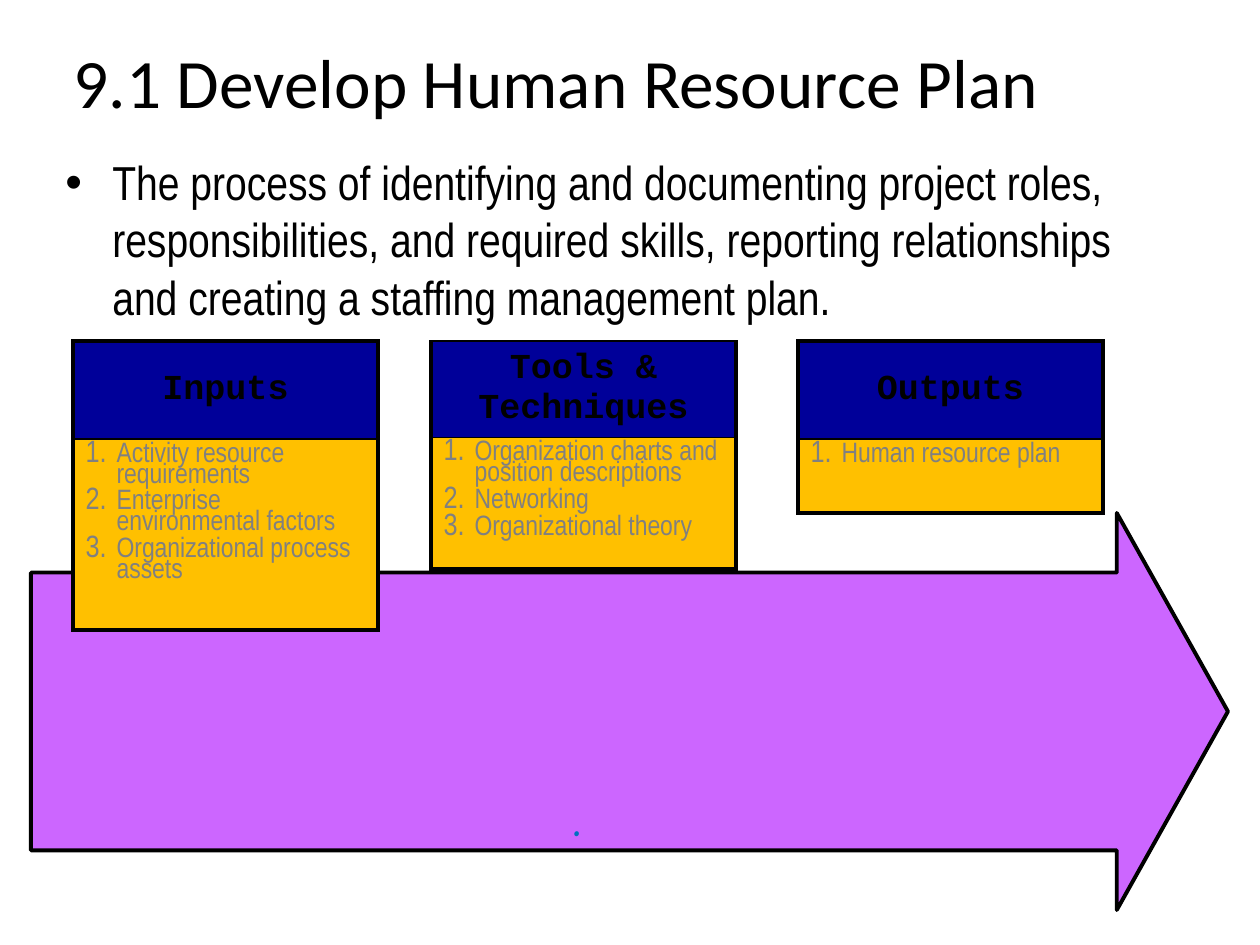
from lxml import etree
from pptx import Presentation
from pptx import util as u
from pptx.dml.color import RGBColor
from pptx.enum import shapes, text
from pptx.oxml.ns import qn

BLACK = RGBColor(0, 0, 0)
GREY = RGBColor(0x80, 0x80, 0x80)
NAVY = RGBColor(0, 0, 0x99)
GOLD = RGBColor(0xFF, 0xC0, 0)
VIOLET = RGBColor(0xCC, 0x66, 0xFF)
BLUE = RGBColor(0, 0x70, 0xC0)
THICK, THIN = 2.25, 1

# left, header height, list height, top border, heading, items
CARDS = [
    (73, 98, 191, THICK, "Inputs",
     ["Activity resource requirements", "Enterprise environmental factors",
      "Organizational process assets"]),
    (431, 90, 108, THIN, "Tools & Techniques",
     ["Organization charts and position descriptions", "Networking",
      "Organizational theory"]),
    (798, 98, 74, THICK, "Outputs", ["Human resource plan"]),
]


def px(n):
    return u.Emu(round(n * 914400 / 126))


def box(*sides):
    return [px(n) for n in sides]


def style(para, face, size, color, bold=False):
    font = para.font
    font.name, font.size, font.bold = face, u.Pt(size), bold
    font.color.rgb = color


def bullet(para, indent, tag, **attrs):
    """Give the paragraph a hanging bullet; call before its font is set."""
    props = para._p.get_or_add_pPr()
    props.set("marL", str(px(indent)))
    props.set("indent", str(-px(indent)))
    if tag == "a:buAutoNum":
        etree.SubElement(props, qn("a:buSzPct"), val="110000")
    else:
        etree.SubElement(props, qn("a:buFont"), typeface="Arial")
    etree.SubElement(props, qn(tag), **attrs)


def edge(cell, top, bottom):
    """Draw the cell's borders; the sides are always thick."""
    props = cell._tc.get_or_add_tcPr()
    widths = {"a:lnL": THICK, "a:lnR": THICK, "a:lnT": top, "a:lnB": bottom}
    for i, (tag, width) in enumerate(widths.items()):
        line = etree.Element(qn(tag), w=str(u.Pt(width)))
        fill = etree.SubElement(line, qn("a:solidFill"))
        etree.SubElement(fill, qn("a:srgbClr"), val=str(BLACK))
        props.insert(i, line)


def paint(cell, color):
    cell.fill.solid()
    cell.fill.fore_color.rgb = color


def arrow(slide, *sides):
    shape = slide.shapes.add_shape(shapes.MSO_SHAPE.RIGHT_ARROW, *box(*sides))
    shape.shadow.inherit = False
    shape.adjustments[0], shape.adjustments[1] = 0.7, 0.28
    shape.fill.solid()
    shape.fill.fore_color.rgb = VIOLET
    shape.line.color.rgb = BLACK
    shape.line.width = u.Pt(THICK)


def title(slide, *sides):
    shape = slide.shapes.title
    shape.left, shape.top, shape.width, shape.height = box(*sides)
    frame = shape.text_frame
    frame.text = "9.1 Develop Human Resource Plan"
    frame.auto_size = text.MSO_AUTO_SIZE.NONE
    frame.vertical_anchor = text.MSO_ANCHOR.MIDDLE
    para = frame.paragraphs[0]
    para.alignment = text.PP_ALIGN.CENTER
    style(para, "Calibri", 39.6, BLACK)


def note(slide, words, *sides):
    """Add a wrapping text box and return its paragraph."""
    frame = slide.shapes.add_textbox(*box(*sides)).text_frame
    frame.word_wrap = True
    frame.text = words
    return frame.paragraphs[0]


def card(slide, left, top, width, head, body, rim, name, items):
    """Place a table with a heading cell above a numbered list."""
    table = slide.shapes.add_table(
        2, 1, *box(left, top, width, head + body)).table
    table.first_row = table.horz_banding = False
    table.rows[0].height, table.rows[1].height = px(head), px(body)

    cell = table.cell(0, 0)
    cell.text = name
    cell.vertical_anchor = text.MSO_ANCHOR.MIDDLE
    para = cell.text_frame.paragraphs[0]
    para.alignment = text.PP_ALIGN.CENTER
    style(para, "Courier New", 20, BLACK, True)
    paint(cell, NAVY)
    edge(cell, rim, THIN)

    cell = table.cell(1, 0)
    cell.text = "\n".join(items)
    for para in cell.text_frame.paragraphs:
        para.line_spacing = 0.8
        para.space_before = u.Pt(3.2)
        bullet(para, 31, "a:buAutoNum", type="arabicPeriod")
        style(para, "Arial Narrow", 16, GREY)
    paint(cell, GOLD)
    edge(cell, THIN, THICK)


def main():
    deck = Presentation()
    deck.slide_width, deck.slide_height = px(1260), px(945)
    slide = deck.slides.add_slide(deck.slide_layouts[5])
    arrow(slide, 31, 513, 1197, 397)
    title(slide, 31, 54, 1050, 53)
    para = note(slide, "The process of identifying and documenting project "
                "roles, responsibilities, and required skills, reporting "
                "relationships and creating a staffing management plan.",
                53, 147, 1081, 158)
    para.space_before = u.Pt(5.4)
    bullet(para, 47, "a:buChar", char="•")
    style(para, "Arial Narrow", 27.2, BLACK)
    for left, *rest in CARDS:
        card(slide, left, 341, 305, *rest)
    para = note(slide, ".", 63, 788, 1029, 63)
    para.alignment = text.PP_ALIGN.CENTER
    style(para, "Comic Neue", 24, BLUE, True)
    deck.save("out.pptx")


if __name__ == "__main__":
    main()
